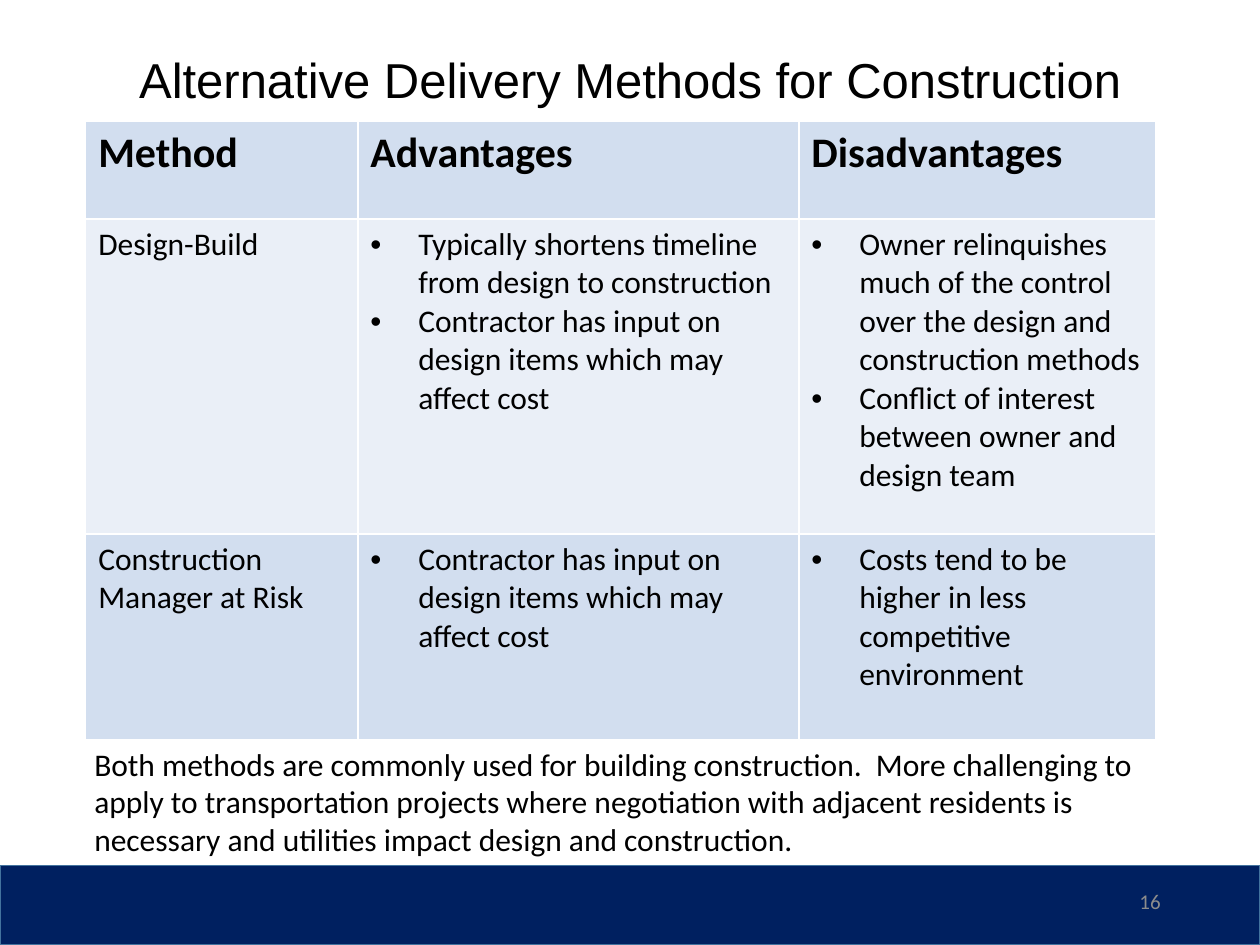
"""Build a slide that compares alternative delivery methods for construction."""
import pptx
import pptx.dml.color
import pptx.enum.shapes
import pptx.enum.text
import pptx.oxml
import pptx.oxml.ns
import pptx.util

Inches = pptx.util.Inches
Pt = pptx.util.Pt
ALIGN = pptx.enum.text.PP_ALIGN
ANCHOR = pptx.enum.text.MSO_ANCHOR

COLORS = {
    "navy": "002060",
    "edge": "43739E",
    "ink": "000000",
    "gray": "8C8C8C",
    "band": "D2DEEF",
    "pale": "EAEFF7",
    "rule": "FFFFFF",
}
COLS = [2.16, 3.5, 2.83]
ROWS = [0.78, 2.5, 1.63]
HEADS = ["Method", "Advantages", "Disadvantages"]
METHODS = [
    (
        "Design-Build",
        ["Typically shortens timeline from design to construction",
         "Contractor has input on design items which may affect cost"],
        ["Owner relinquishes much of the control over the design and construction methods ",
         "Conflict of interest between owner and design team"],
    ),
    (
        "Construction Manager at Risk",
        ["Contractor has input on design items which may affect cost"],
        ["Costs tend to be higher in less competitive environment"],
    ),
]
NOTE = (
    "Both methods are commonly used for building construction.  More challenging to "
    "apply to transportation projects where negotiation with adjacent residents is "
    "necessary and utilities impact design and construction."
)


def color(name):
    return pptx.dml.color.RGBColor.from_string(COLORS[name])


def bullet(para):
    props = para._p.get_or_add_pPr()
    props.set("marL", str(Inches(0.38)))
    props.set("indent", str(-Inches(0.38)))
    ns = pptx.oxml.ns.nsdecls("a")
    props.append(pptx.oxml.parse_xml(f'<a:buFont {ns} typeface="Arial"/>'))
    props.append(pptx.oxml.parse_xml(f'<a:buChar {ns} char="•"/>'))


def write(frame, text, size=18, font="Calibri", ink="ink", bold=False,
          align=ALIGN.LEFT, space=None):
    """Fill a frame with one string, or with a bullet for each list item."""
    listed = isinstance(text, list)
    for i, line in enumerate(text if listed else [text]):
        para = frame.add_paragraph() if i else frame.paragraphs[0]
        para.alignment = align
        if space:
            para.line_spacing = space
        if listed:
            bullet(para)
        run = para.add_run()
        run.text = line
        run.font.size = Pt(size)
        run.font.name = font
        run.font.bold = bold
        run.font.color.rgb = color(ink)


def add_text(slide, box, text, anchor=ANCHOR.TOP, **style):
    frame = slide.shapes.add_textbox(*map(Inches, box)).text_frame
    frame.word_wrap = True
    frame.vertical_anchor = anchor
    write(frame, text, **style)


def add_bar(slide, box):
    kind = pptx.enum.shapes.MSO_SHAPE.RECTANGLE
    bar = slide.shapes.add_shape(kind, *map(Inches, box))
    bar.shadow.inherit = False
    bar.fill.solid()
    bar.fill.fore_color.rgb = color("navy")
    bar.line.color.rgb = color("edge")
    bar.line.width = Pt(1)


def paint(cell, fill):
    props = cell._tc.get_or_add_tcPr()
    ns = pptx.oxml.ns.nsdecls("a")
    for side in ("lnL", "lnR", "lnT", "lnB"):
        props.append(pptx.oxml.parse_xml(
            f'<a:{side} {ns} w="{Pt(1)}"><a:solidFill>'
            f'<a:srgbClr val="{COLORS["rule"]}"/></a:solidFill></a:{side}>'))
    cell.fill.solid()
    cell.fill.fore_color.rgb = color(fill)


def add_grid(slide, left, top):
    rows = [HEADS, *METHODS]
    table = slide.shapes.add_table(
        len(rows), len(COLS), Inches(left), Inches(top),
        Inches(sum(COLS)), Inches(sum(ROWS))).table
    for col, width in zip(table.columns, COLS):
        col.width = Inches(width)
    for r, (row, height) in enumerate(zip(rows, ROWS)):
        table.rows[r].height = Inches(height)
        for c, text in enumerate(row):
            cell = table.cell(r, c)
            paint(cell, "pale" if r % 2 else "band")
            write(cell.text_frame, text, size=18 if r else 24, bold=r == 0)


def main():
    deck = pptx.Presentation()
    deck.slide_width, deck.slide_height = Inches(10), Inches(7.5)
    slide = deck.slides.add_slide(deck.slide_layouts[6])
    add_bar(slide, (0, 6.87, 10, 0.63))
    add_text(slide, (0.69, 0.4, 8.62, 6.36),
             "Alternative Delivery Methods for Construction",
             size=28, font="Arial", align=ALIGN.CENTER, space=0.9)
    add_text(slide, (7.06, 6.95, 2.25, 0.4), "16", anchor=ANCHOR.MIDDLE,
             size=12, ink="gray", align=ALIGN.RIGHT)
    add_grid(slide, 0.68, 0.96)
    add_text(slide, (0.65, 5.86, 8.66, 1.01), NOTE)
    deck.save("out.pptx")


if __name__ == "__main__":
    main()
